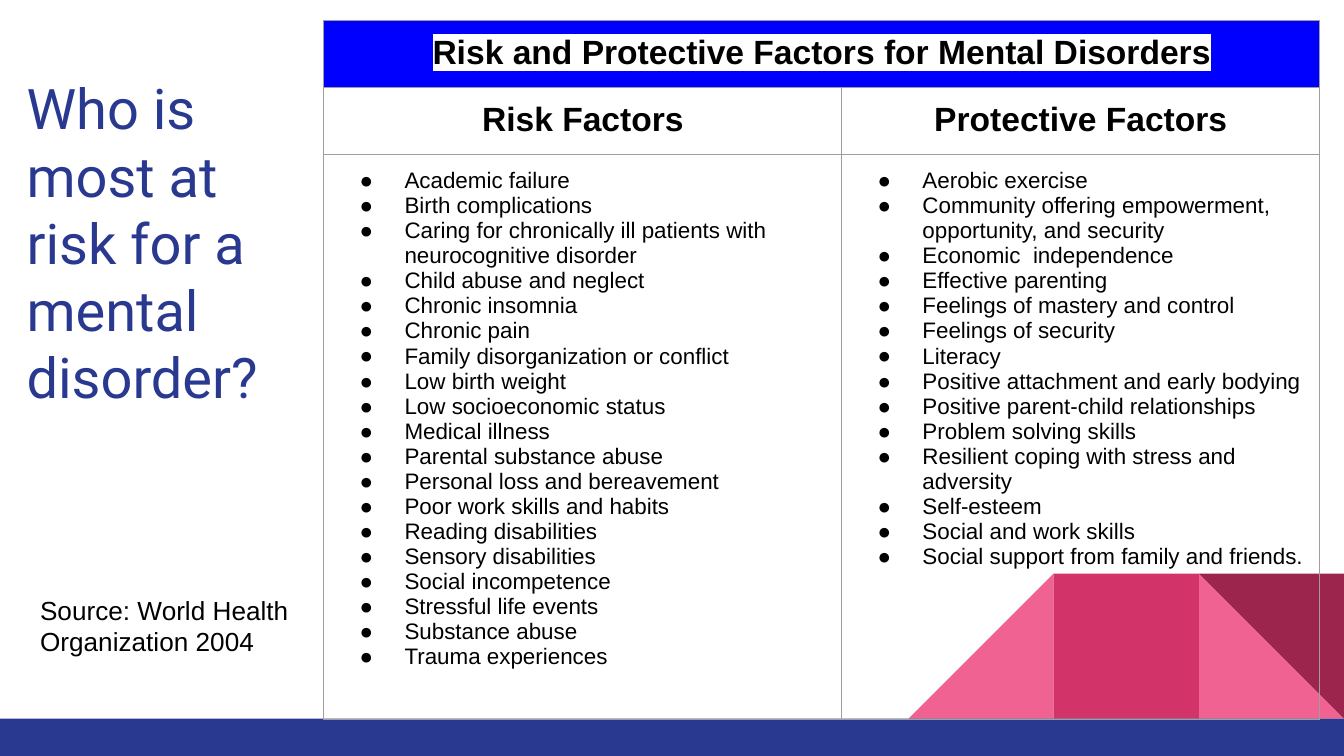
import pptx
import pptx.util
import pptx.dml.color
import pptx.enum.shapes
import pptx.enum.text
import pptx.oxml
import pptx.oxml.ns

Pt = pptx.util.Pt
qn = pptx.oxml.ns.qn
SHAPE = pptx.enum.shapes.MSO_SHAPE
CENTER = pptx.enum.text.PP_ALIGN.CENTER

# Content
TITLE = "Who is most at risk for a mental disorder?"
SOURCE = "Source: World Health Organization 2004"
TABLE_TITLE = "Risk and Protective Factors for Mental Disorders"
FACTORS = {
    "Risk Factors": [
        "Academic failure",
        "Birth complications",
        "Caring for chronically ill patients with neurocognitive disorder",
        "Child abuse and neglect",
        "Chronic insomnia",
        "Chronic pain",
        "Family disorganization or conflict",
        "Low birth weight",
        "Low socioeconomic status",
        "Medical illness",
        "Parental substance abuse",
        "Personal loss and bereavement",
        "Poor work skills and habits",
        "Reading disabilities",
        "Sensory disabilities",
        "Social incompetence",
        "Stressful life events",
        "Substance abuse",
        "Trauma experiences",
    ],
    "Protective Factors": [
        "Aerobic exercise",
        "Community offering empowerment, opportunity, and security",
        "Economic  independence",
        "Effective parenting",
        "Feelings of mastery and control",
        "Feelings of security",
        "Literacy",
        "Positive attachment and early bodying",
        "Positive parent-child relationships",
        "Problem solving skills",
        "Resilient coping with stress and adversity",
        "Self-esteem",
        "Social and work skills",
        "Social support from family and friends.",
    ],
}
COLORS = {
    "black": "000000", "white": "FFFFFF", "navy": "2A3990", "blue": "0000FF",
    "pink": "F06292", "rose": "D23369", "wine": "9C254D", "border": "9E9E9E",
}

# Layout
WIDTH, HEIGHT = 720, 405
BAR_TOP, TILE = 385, 77.75
COL_WIDTHS = (277.5, 256)
ROW_HEIGHTS = (34.6, 34.6, 298.8)
INSET = 7.2


def rgb(name):
    return pptx.dml.color.RGBColor.from_string(COLORS[name])


def add_xml(parent, xml, index=None):
    ns = pptx.oxml.ns.nsdecls("a")
    el = pptx.oxml.parse_xml(xml.replace(">", f" {ns}>", 1) if "/>" not in xml.split(">")[0] + ">"
                             else xml.replace("/>", f" {ns}/>", 1))
    parent.insert(len(parent) if index is None else index, el)


def write(tf, lines, size=12, font="Arial", color="black", bold=False,
          align=None, highlight=None, bullet=False):
    """Fill a text frame with one paragraph per line."""
    tf.word_wrap = True
    tf.vertical_anchor = pptx.enum.text.MSO_ANCHOR.TOP
    for i, line in enumerate([lines] if isinstance(lines, str) else lines):
        p = tf.paragraphs[0] if i == 0 else tf.add_paragraph()
        p.alignment = align
        r = p.add_run()
        r.text = line
        r.font.size, r.font.name, r.font.bold = Pt(size), font, bold
        r.font.color.rgb = rgb(color)
        if highlight:
            add_xml(r.font._element,
                    f'<a:highlight><a:srgbClr val="{COLORS[highlight]}"/></a:highlight>', 1)
        if bullet:
            pPr = p._p.get_or_add_pPr()
            pPr.set("marL", str(Pt(36)))
            pPr.set("indent", str(-Pt(24)))
            add_xml(pPr, f'<a:buClr><a:srgbClr val="{COLORS[color]}"/></a:buClr>')
            add_xml(pPr, '<a:buFont typeface="Arial"/>')
            add_xml(pPr, '<a:buChar char="●"/>')


def add_text(s, x, y, w, h, text, **fmt):
    tf = s.shapes.add_textbox(Pt(x), Pt(y), Pt(w), Pt(h)).text_frame
    tf.margin_left = tf.margin_right = tf.margin_top = tf.margin_bottom = Pt(INSET)
    write(tf, text, **fmt)


def add_block(s, kind, x, y, w, h, color, rotation=0, flip=False):
    sp = s.shapes.add_shape(kind, Pt(x), Pt(y), Pt(w), Pt(h))
    sp.shadow.inherit = False
    sp.fill.solid()
    sp.fill.fore_color.rgb = rgb(color)
    sp.line.fill.background()
    sp.rotation = rotation
    if flip:
        sp._element.spPr.find(qn("a:xfrm")).set("flipH", "1")


def style_cell(cell, fill=None):
    cell.margin_left = cell.margin_right = cell.margin_top = cell.margin_bottom = Pt(INSET)
    if fill:
        cell.fill.solid()
        cell.fill.fore_color.rgb = rgb(fill)
    else:
        cell.fill.background()
    for i, side in enumerate("LRTB"):
        add_xml(cell._tc.get_or_add_tcPr(),
                f'<a:ln{side} w="{Pt(0.75)}"><a:solidFill><a:srgbClr val="{COLORS["border"]}"/>'
                f'</a:solidFill></a:ln{side}>', i)


prs = pptx.Presentation()
prs.slide_width, prs.slide_height = Pt(WIDTH), Pt(HEIGHT)
s = prs.slides.add_slide(prs.slide_layouts[6])

# Corner decoration: tiles counted from the right edge, then the bottom bar
for tiles, kind, color, rotation, flip in (
    (1, SHAPE.RIGHT_TRIANGLE, "pink", 0, False),
    (3, SHAPE.RIGHT_TRIANGLE, "pink", 0, True),
    (2, SHAPE.RECTANGLE, "rose", 0, False),
    (1, SHAPE.RIGHT_TRIANGLE, "wine", 180, False),
):
    add_block(s, kind, WIDTH - tiles * TILE, BAR_TOP - TILE, TILE, TILE, color, rotation, flip)
add_block(s, SHAPE.RECTANGLE, 0, BAR_TOP, WIDTH, HEIGHT - BAR_TOP, "navy")

# Title
add_text(s, 7.2, 32.4, 152, 47.5, TITLE, size=30, font="Roboto", color="navy")

# Factors table
table = s.shapes.add_table(3, 2, Pt(173.5), Pt(10.8),
                           Pt(sum(COL_WIDTHS)), Pt(sum(ROW_HEIGHTS))).table
table.first_row = table.horz_banding = False
for col, w in zip(table.columns, COL_WIDTHS):
    col.width = Pt(w)
for row, h in zip(table.rows, ROW_HEIGHTS):
    row.height = Pt(h)
for r in range(3):
    for c in range(2):
        style_cell(table.cell(r, c), "blue" if r == 0 else None)
table.cell(0, 0).merge(table.cell(0, 1))
heading = dict(size=18, bold=True, align=CENTER)
write(table.cell(0, 0).text_frame, TABLE_TITLE, highlight="white", **heading)
for c, (name, items) in enumerate(FACTORS.items()):
    write(table.cell(1, c).text_frame, name, **heading)
    write(table.cell(2, c).text_frame, items, bullet=True)

# Source note
add_text(s, 14.4, 311, 152, 62, SOURCE, size=14)

prs.save("out.pptx")
